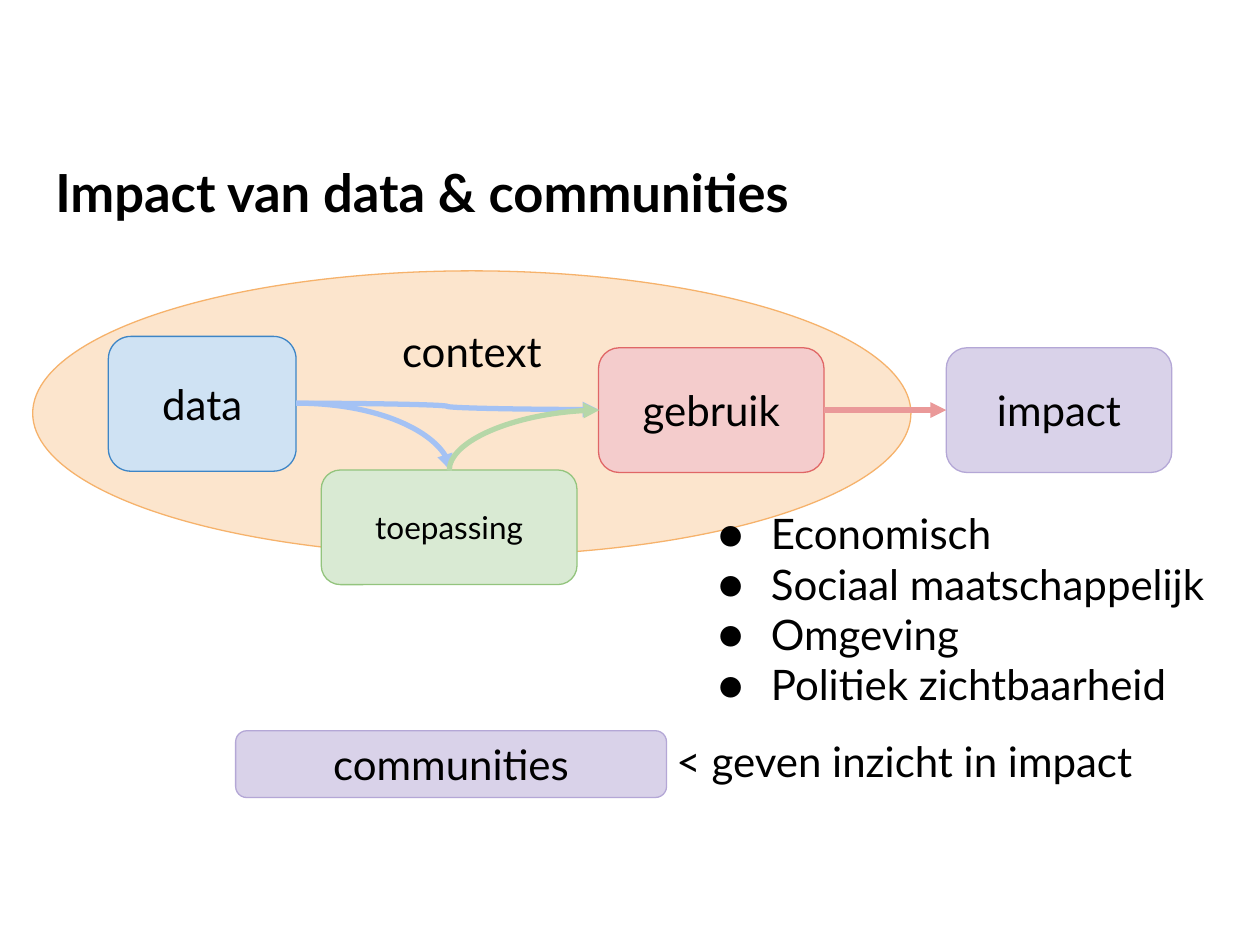
from dataclasses import dataclass

from lxml.etree import SubElement
from pptx import Presentation
from pptx.dml.color import RGBColor
from pptx.enum.shapes import MSO_CONNECTOR, MSO_SHAPE
from pptx.enum.text import MSO_ANCHOR, PP_ALIGN
from pptx.oxml.ns import qn
from pptx.util import Inches, Pt

FONT = "Lato"
COLOURS = {
    "text": "000000",
    "context": "FCE5CD", "context edge": "F6B26B",
    "data": "CFE2F3", "data edge": "3D85C6",
    "app": "D9EAD3", "app edge": "93C47D",
    "use": "F4CCCC", "use edge": "E06666",
    "impact": "D9D2E9", "impact edge": "B4A7D6",
    "data arrow": "A4C2F4", "app arrow": "B6D7A8", "use arrow": "EA9999",
}


@dataclass
class Node:
    label: str
    colour: str
    left: float
    top: float
    width: float
    height: float
    size: int = 24
    preset: MSO_SHAPE = MSO_SHAPE.ROUNDED_RECTANGLE
    anchor: MSO_ANCHOR = MSO_ANCHOR.MIDDLE


@dataclass
class Label:
    lines: list[str]
    left: float
    top: float
    width: float
    height: float
    size: int = 24
    bold: bool = False
    bullet: str = ""


@dataclass
class Curve:
    colour: str
    left: float
    top: float
    width: float
    height: float
    preset: str = "curvedConnector2"
    rotation: int = 0


NODES = [
    Node("context", "context", 0.26, 2.15, 6.97, 2.26,
         preset=MSO_SHAPE.OVAL, anchor=MSO_ANCHOR.TOP),
    Node("data", "data", 0.86, 2.67, 1.49, 1.07),
    Node("toepassing", "app", 2.55, 3.73, 2.03, 0.91, size=18),
    Node("gebruik", "use", 4.75, 2.76, 1.79, 0.99),
    Node("impact", "impact", 7.51, 2.76, 1.79, 0.99),
    Node("communities", "impact", 1.87, 5.8, 3.42, 0.53),
]
CURVES = [
    Curve("data arrow", 2.35, 3.2, 1.22, 0.53),
    Curve("data arrow", 2.35, 3.2, 2.4, 0.05, "curvedConnector3"),
    Curve("app arrow", 3.92, 2.9, 0.48, 1.19, rotation=270),
]
LABELS = [
    Label(["Impact van data & communities"], 0.34, 1.17, 9.32, 0.63, 30, True),
    Label(["Economisch", "Sociaal maatschappelijk", "Omgeving",
           "Politiek zichtbaarheid"], 5.52, 3.93, 4.38, 0.82, bullet="●"),
    Label(["< geven inzicht in impact"], 5.27, 5.74, 4.38, 0.82),
]


def colour(name: str) -> RGBColor:
    return RGBColor.from_string(COLOURS[name])


def set_frame(frame, anchor: MSO_ANCHOR) -> None:
    frame.word_wrap = True
    frame.vertical_anchor = anchor
    frame.margin_left = frame.margin_right = Inches(0.1)
    frame.margin_top = frame.margin_bottom = Inches(0.1)


def add_span(para, text: str, size: int, bold: bool = False) -> None:
    span = para.add_run()
    span.text = text
    span.font.name = FONT
    span.font.size = Pt(size)
    span.font.bold = bold
    span.font.color.rgb = colour("text")


def add_bullet(para, symbol: str) -> None:
    properties = para._p.get_or_add_pPr()
    properties.set("marL", str(Inches(0.5)))
    properties.set("indent", str(Inches(-0.42)))
    bullet_colour = SubElement(properties, qn("a:buClr"))
    SubElement(bullet_colour, qn("a:srgbClr"), val=COLOURS["text"])
    SubElement(properties, qn("a:buFont"), typeface=FONT)
    SubElement(properties, qn("a:buChar"), char=symbol)


def draw_node(page, node: Node):
    shape = page.shapes.add_shape(node.preset, Inches(node.left), Inches(node.top),
                                  Inches(node.width), Inches(node.height))
    shape.shadow.inherit = False
    shape.fill.solid()
    shape.fill.fore_color.rgb = colour(node.colour)
    shape.line.color.rgb = colour(f"{node.colour} edge")
    shape.line.width = Pt(0.75)
    set_frame(shape.text_frame, node.anchor)
    para = shape.text_frame.paragraphs[0]
    para.alignment = PP_ALIGN.CENTER
    add_span(para, node.label, node.size)
    return shape


def draw_label(page, label: Label) -> None:
    box = page.shapes.add_textbox(Inches(label.left), Inches(label.top),
                                  Inches(label.width), Inches(label.height))
    set_frame(box.text_frame, MSO_ANCHOR.TOP)
    for index, line in enumerate(label.lines):
        para = box.text_frame.add_paragraph() if index else box.text_frame.paragraphs[0]
        if label.bullet:
            add_bullet(para, label.bullet)
        add_span(para, line, label.size, label.bold)


def style_arrow(connector, name: str) -> None:
    connector.line.color.rgb = colour(name)
    connector.line.width = Pt(3)
    SubElement(connector.line._get_or_add_ln(), qn("a:tailEnd"), type="triangle")
    SubElement(connector._element.spPr, qn("a:effectLst"))


def draw_curve(page, curve: Curve) -> None:
    connector = page.shapes.add_connector(
        MSO_CONNECTOR.CURVE, Inches(curve.left), Inches(curve.top),
        Inches(curve.left + curve.width), Inches(curve.top + curve.height))
    properties = connector._element.spPr
    properties.find(qn("a:prstGeom")).set("prst", curve.preset)
    properties.find(qn("a:xfrm")).set("rot", str(curve.rotation * 60000))
    style_arrow(connector, curve.colour)


def draw_straight(page, start, end, name: str) -> None:
    connector = page.shapes.add_connector(MSO_CONNECTOR.STRAIGHT, 0, 0, 0, 0)
    connector.begin_connect(start, 3)
    connector.end_connect(end, 1)
    style_arrow(connector, name)


def main() -> None:
    deck = Presentation()
    deck.slide_width, deck.slide_height = Inches(10), Inches(7.5)
    page = deck.slides.add_slide(deck.slide_layouts[6])
    shapes = {node.label: draw_node(page, node) for node in NODES}
    draw_straight(page, shapes["gebruik"], shapes["impact"], "use arrow")
    for curve in CURVES:
        draw_curve(page, curve)
    for label in LABELS:
        draw_label(page, label)
    deck.save("out.pptx")


if __name__ == "__main__":
    main()
